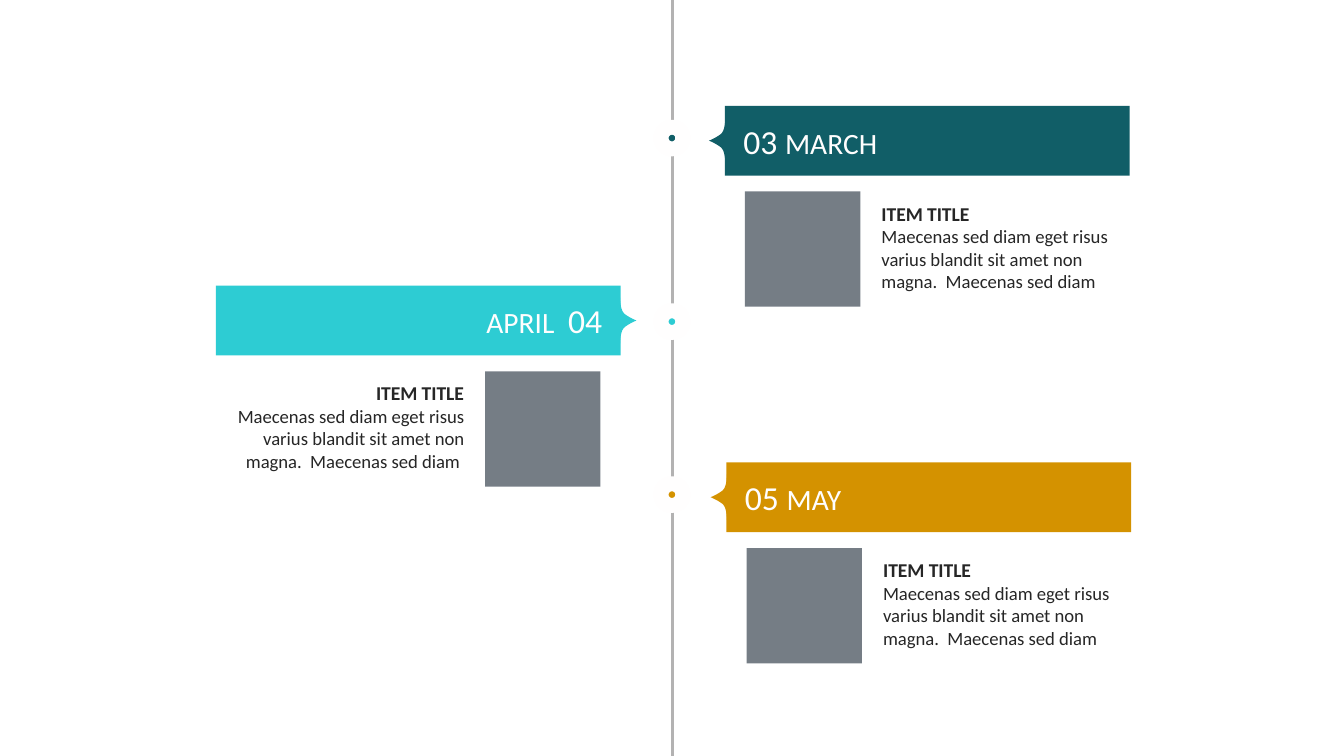
from dataclasses import dataclass

from lxml import etree
from pptx import Presentation
from pptx.dml.color import RGBColor
from pptx.enum.shapes import MSO_CONNECTOR, MSO_SHAPE
from pptx.enum.text import MSO_ANCHOR, PP_ALIGN
from pptx.oxml.ns import qn
from pptx.util import Cm, Pt

RECT, OVAL = MSO_SHAPE.RECTANGLE, MSO_SHAPE.OVAL
LEFT, RIGHT = PP_ALIGN.LEFT, PP_ALIGN.RIGHT
TOP, MIDDLE = MSO_ANCHOR.TOP, MSO_ANCHOR.MIDDLE

TEAL = RGBColor(0x11, 0x5E, 0x67)
TURQUOISE = RGBColor(0x2D, 0xCC, 0xD3)
OCHRE = RGBColor(0xD4, 0x92, 0x00)
SLATE = RGBColor(0x32, 0x3E, 0x4A)
GREY = RGBColor(0xB3, 0xB2, 0xB2)
WHITE = RGBColor(0xFF, 0xFE, 0xFE)
INK = RGBColor(0x26, 0x26, 0x26)

FONT = "Calibri"
NUMBER_SIZE, MONTH_SIZE = Pt(18), Pt(15.8)
SLIDE_W, SLIDE_H = 25.4, 14.29
AXIS_X = 12.71
BAR_W, BAR_H = 7.65, 1.32
DOT = 0.41
PHOTO = 2.18
BODY = "Maecenas sed diam eget risus varius blandit sit amet non magna.  Maecenas sed diam"

# Two Bézier curves of the beak's upper edge, from the bar to the tip;
# x runs inwards from the tip and y is the height above it
BEAK_CURVES = [
    [(0.31, 0.43), (0.31, 0.43), (0.31, 0.2), (0.23, 0.13)],
    [(0.23, 0.13), (0.13, 0.05), (0, 0), (0, 0)],
]
BEAK_REACH = 0.3
BEAK_ROOT = 0.44


@dataclass
class Month:
    heading: list[tuple[str, Pt]]
    body: str
    color: RGBColor
    x: float  # the bar's edge that faces the axis
    y: float
    dot_y: float
    side: int  # 1 right of the axis, -1 left of it

    @property
    def align(self) -> PP_ALIGN:
        return LEFT if self.side > 0 else RIGHT

    def left(self, offset: float, width: float) -> float:
        """Left edge of a part that starts offset away from the bar's inner edge."""
        return self.x + offset if self.side > 0 else self.x - offset - width


MONTHS = [
    Month([("03 ", NUMBER_SIZE), ("MARCH", MONTH_SIZE)], BODY, TEAL, 13.7, 2.0, 2.61, 1),
    Month([("APRIL  ", MONTH_SIZE), ("04", NUMBER_SIZE)], BODY + " ", TURQUOISE,
          11.73, 5.4, 6.08, -1),
    Month([("05 ", NUMBER_SIZE), ("MAY", MONTH_SIZE)], BODY, OCHRE, 13.73, 8.74, 9.35, 1),
]


def paint(sp, color: RGBColor) -> None:
    sp.shadow.inherit = False
    sp.fill.solid()
    sp.fill.fore_color.rgb = color
    sp.line.fill.background()


def add_block(s, kind, x: float, y: float, w: float, h: float, color: RGBColor):
    sp = s.shapes.add_shape(kind, Cm(x), Cm(y), Cm(w), Cm(h))
    paint(sp, color)
    return sp


def add_text_frame(s, x: float, y: float, w: float, h: float, anchor):
    tf = s.shapes.add_textbox(Cm(x), Cm(y), Cm(w), Cm(h)).text_frame
    tf.word_wrap = True
    tf.margin_left = tf.margin_right = tf.margin_top = tf.margin_bottom = 0
    tf.vertical_anchor = anchor
    return tf


def format_paragraph(p, align, color: RGBColor) -> None:
    p.alignment = align
    p.font.name = FONT
    p.font.color.rgb = color


def add_axis(s) -> None:
    line = s.shapes.add_connector(MSO_CONNECTOR.STRAIGHT, Cm(AXIS_X), 0, Cm(AXIS_X), Cm(SLIDE_H))
    line.line.color.rgb = GREY
    line.line.width = Pt(2)
    etree.SubElement(line._element.spPr, qn("a:effectLst"))


def bezier(curve: list[tuple[float, float]], t: float) -> tuple[float, ...]:
    weights = ((1 - t) ** 3, 3 * t * (1 - t) ** 2, 3 * t ** 2 * (1 - t), t ** 3)
    return tuple(sum(w * pt[i] for w, pt in zip(weights, curve)) for i in (0, 1))


def add_beak(s, month: Month) -> None:
    """Curved pointer from the middle of the bar towards the axis."""
    tip_x = month.x - month.side * BEAK_REACH
    mid_y = month.y + BAR_H / 2
    upper = [(BEAK_ROOT, 0.43)]
    upper += [bezier(curve, step / 10) for curve in BEAK_CURVES for step in range(11)]
    outline = upper + [(x, -y) for x, y in reversed(upper)]
    points = [(Cm(tip_x + month.side * x), Cm(mid_y - y)) for x, y in outline]
    builder = s.shapes.build_freeform(*points[0])
    builder.add_line_segments(points[1:], close=True)
    paint(builder.convert_to_shape(), month.color)


def add_photo_area(s, month: Month) -> None:
    sp = add_block(s, RECT, month.left(0.38, PHOTO), month.y + 1.62, PHOTO, PHOTO, SLATE)
    color = sp._element.spPr.find(qn("a:solidFill"))[0]
    etree.SubElement(color, qn("a:alpha"), val="67000")


def add_heading(s, month: Month) -> None:
    w, h = 7.26, 0.89
    tf = add_text_frame(s, month.left(0.35, w), month.y + (BAR_H - h) / 2, w, h, MIDDLE)
    p = tf.paragraphs[0]
    format_paragraph(p, month.align, WHITE)
    for text, size in month.heading:
        r = p.add_run()
        r.text = text
        r.font.size = size


def add_body(s, month: Month) -> None:
    w = 4.39
    tf = add_text_frame(s, month.left(2.96, w), month.y + 1.81, w, 1.78, TOP)
    title, body = tf.paragraphs[0], tf.add_paragraph()
    title.text, body.text = "ITEM TITLE", month.body
    for p, size, bold in ((title, 10.5, True), (body, 10, False)):
        format_paragraph(p, month.align, INK)
        p.font.size = Pt(size)
        p.font.bold = bold


def add_month(s, month: Month) -> None:
    dot = add_block(s, OVAL, SLIDE_W / 2 - DOT / 2, month.dot_y - DOT / 2, DOT, DOT, month.color)
    dot.line.color.rgb = WHITE
    dot.line.width = Pt(8)
    add_block(s, RECT, month.left(0, BAR_W), month.y, BAR_W, BAR_H, month.color)
    add_beak(s, month)
    add_heading(s, month)
    add_photo_area(s, month)
    add_body(s, month)


def main() -> None:
    prs = Presentation()
    prs.slide_width, prs.slide_height = Cm(SLIDE_W), Cm(SLIDE_H)
    s = prs.slides.add_slide(prs.slide_layouts[6])
    add_axis(s)
    for month in MONTHS:
        add_month(s, month)
    prs.save("out.pptx")


if __name__ == "__main__":
    main()
